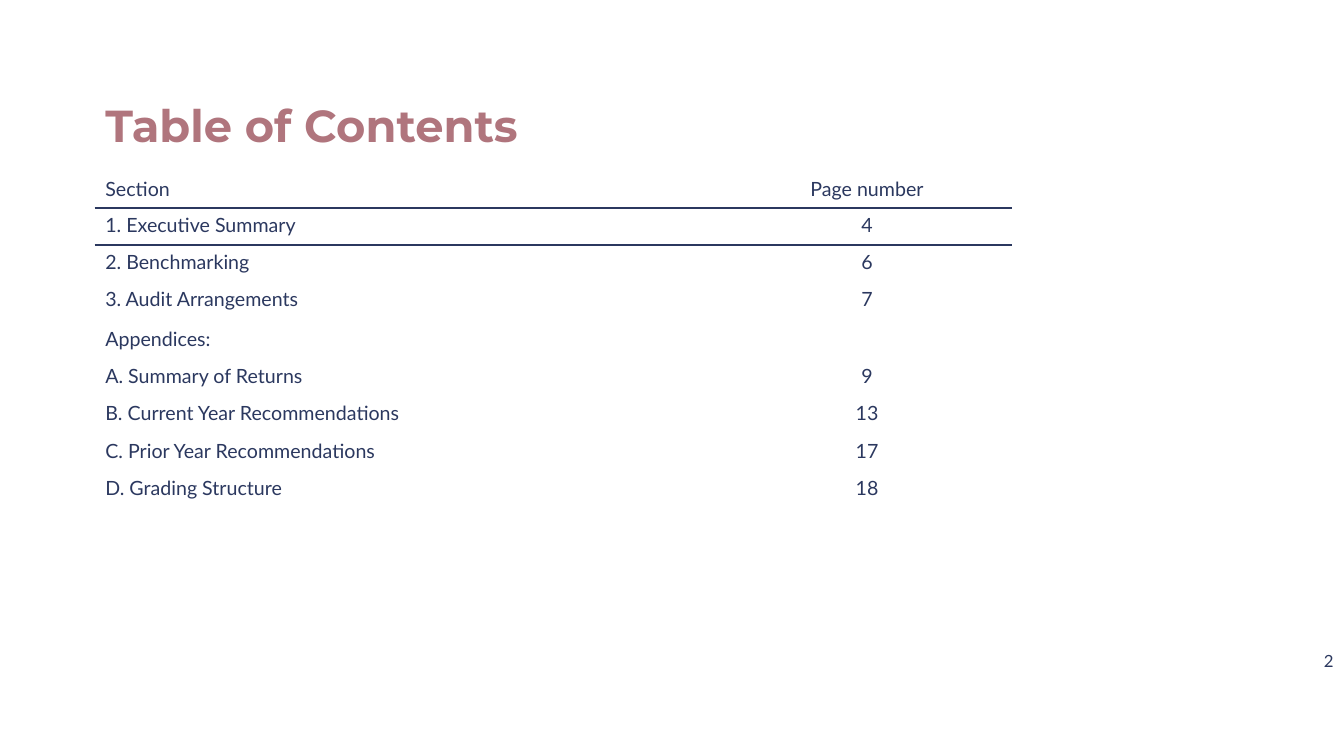
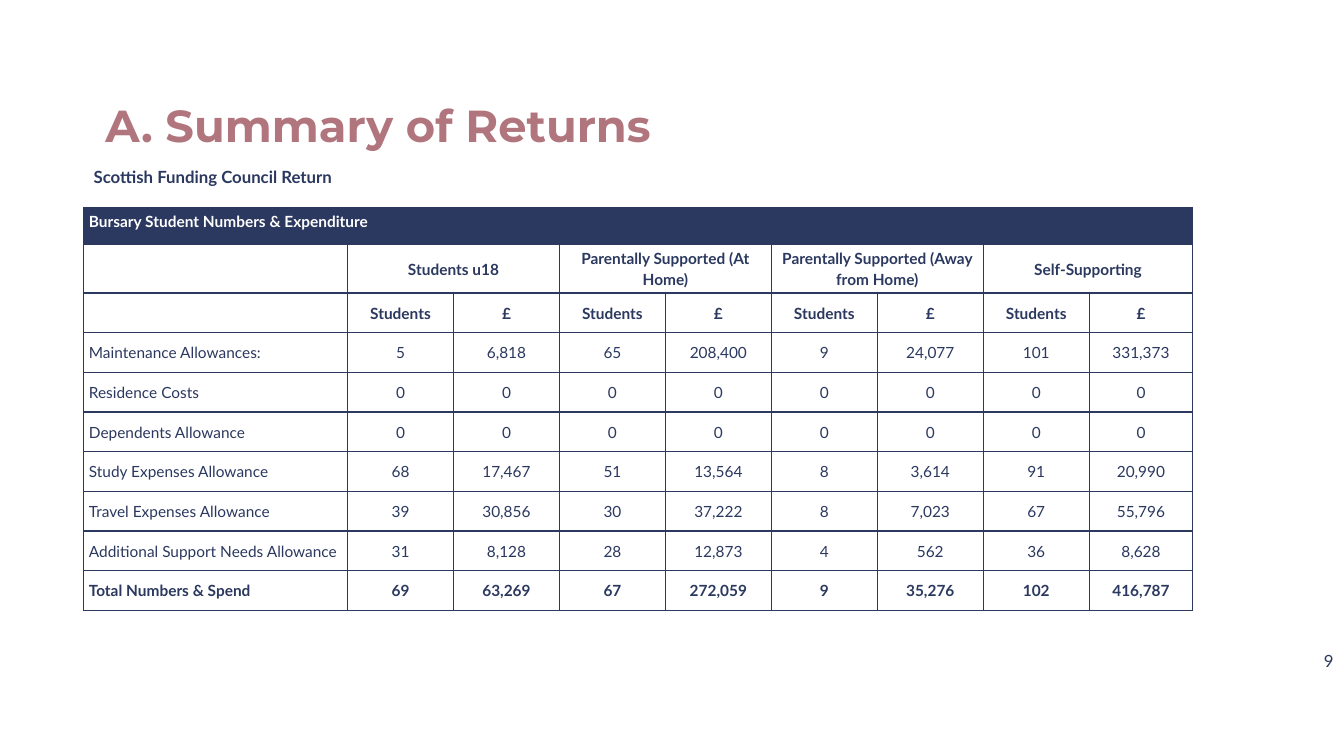
from lxml.etree import SubElement
from pptx import Presentation
from pptx.dml.color import RGBColor
from pptx.enum.text import MSO_ANCHOR, MSO_AUTO_SIZE, PP_ALIGN
from pptx.oxml.ns import qn
from pptx.util import Cm, Pt

NAVY, ROSE, WHITE = "2B385F", "B0757D", "FFFFFF"
LEFT, MID, RIGHT = PP_ALIGN.LEFT, PP_ALIGN.CENTER, PP_ALIGN.RIGHT
TOP, CENTRE = MSO_ANCHOR.TOP, MSO_ANCHOR.MIDDLE

# Shared boxes: left, top, width, height in cm
TITLE_BOX = (2.4, 1.27, 24.46, 2.69)
PAGE_BOX = (26.24, 16.15, 7.62, 1.02)

# Shared text formats
TITLE = dict(name="Montserrat", size=Pt(32), bold=True)
PAGE = dict(name="Lato", size=Pt(12), bold=False)
HEAD = dict(name="Lato", size=Pt(12), bold=True)
LIST = dict(name="Lato", size=Pt(14), bold=False)
GRID = dict(name="Lato", size=Pt(11), bold=False)
STRONG = {**GRID, "bold": True}

# Cell margins
WIDE = dict(margin_left=Cm(0.13), margin_right=Cm(0.13),
            margin_top=Cm(0.05), margin_bottom=Cm(0.1))
TIGHT = dict(margin_left=Cm(0.02), margin_right=Cm(0.02),
             margin_top=Cm(0.02), margin_bottom=Cm(0))

CONTENTS = [
    ("Section", "Page number"),
    ("1. Executive Summary", "4"),
    ("2. Benchmarking", "6"),
    ("3. Audit Arrangements", "7"),
    ("Appendices:", ""),
    ("A. Summary of Returns", "9"),
    ("B. Current Year Recommendations", "13"),
    ("C. Prior Year Recommendations", "17"),
    ("D. Grading Structure", "18"),
]

BANNER = "Bursary Student Numbers & Expenditure"
GROUPS = ["Students u18", "Parentally Supported (At Home)",
          "Parentally Supported (Away from Home)", "Self-Supporting"]
RETURNS = [
    ("Maintenance Allowances:", "5", "6,818", "65", "208,400", "9", "24,077", "101", "331,373"),
    ("Residence Costs",) + ("0",) * 8,
    ("Dependents Allowance",) + ("0",) * 8,
    ("Study Expenses Allowance", "68", "17,467", "51", "13,564", "8", "3,614", "91", "20,990"),
    ("Travel Expenses Allowance", "39", "30,856", "30", "37,222", "8", "7,023", "67", "55,796"),
    ("Additional Support Needs Allowance", "31", "8,128", "28", "12,873", "4", "562", "36", "8,628"),
    ("Total Numbers & Spend", "69", "63,269", "67", "272,059", "9", "35,276", "102", "416,787"),
]


def paint(target, code):
    """Give a font, fill or line format a colour."""
    target.rgb = RGBColor.from_string(code)


def apply(item, form):
    for key, value in form.items():
        setattr(item, key, value)


def place(shape, box):
    apply(shape, dict(zip(("left", "top", "width", "height"), map(Cm, box))))


def write(frame, text, form, code=NAVY, align=LEFT, space=None):
    para = frame.paragraphs[0]
    apply(para, dict(alignment=align, line_spacing=space))
    run = para.add_run()
    run.text = text
    apply(run.font, form)
    paint(run.font.color, code)


def add_text(slide, box, text, form, anchor=TOP, **style):
    shape = slide.shapes.add_textbox(*map(Cm, box))
    apply(shape.text_frame, dict(word_wrap=True, vertical_anchor=anchor))
    write(shape.text_frame, text, form, **style)


def add_page(deck, title, number):
    """Add a slide with the common title and page number."""
    slide = deck.slides.add_slide(deck.slide_layouts[5])
    place(slide.shapes.title, TITLE_BOX)
    frame = slide.shapes.title.text_frame
    apply(frame, dict(vertical_anchor=MSO_ANCHOR.BOTTOM, word_wrap=True,
                      auto_size=MSO_AUTO_SIZE.NONE))
    write(frame, title, TITLE, ROSE, space=0.9)
    add_text(slide, PAGE_BOX, number, PAGE, CENTRE, align=RIGHT)
    return slide


def add_grid(slide, left, top, widths, heights):
    """Add a plain table sized from its column and row lists."""
    box = (left, top, sum(widths), sum(heights))
    table = slide.shapes.add_table(len(heights), len(widths), *map(Cm, box)).table
    apply(table, dict(first_row=False, horz_banding=False))
    for col, width in zip(table.columns, widths):
        col.width = Cm(width)
    for row, height in zip(table.rows, heights):
        row.height = Cm(height)
    return table


def fill_cell(cell, code=WHITE):
    cell.fill.solid()
    paint(cell.fill.fore_color, code)


def edge(cell, sides, points):
    """Draw the named sides of a cell: L, R, T or B, in that order."""
    props = cell._tc.get_or_add_tcPr()
    for place_no, side in enumerate(sides):
        line = SubElement(props, qn("a:ln" + side), w=str(Pt(points)))
        props.insert(place_no, line)
        fill = SubElement(line, qn("a:solidFill"))
        SubElement(fill, qn("a:srgbClr"), val=NAVY)


def list_table(slide, left, top):
    """Sections and their page numbers, under a ruled heading."""
    table = add_grid(slide, left, top, [15.82, 7.26], [0.94] * len(CONTENTS))
    for r, row in enumerate(CONTENTS):
        for c, text in enumerate(row):
            cell = table.cell(r, c)
            fill_cell(cell)
            if r < 2:
                edge(cell, "T" if r else "B", 2)
            if text:
                cell.vertical_anchor = TOP if 0 < r < 4 else CENTRE
                write(cell.text_frame, text, LIST, align=MID if c else LEFT)
            else:
                apply(cell, TIGHT)


def money_table(slide, left, top):
    """Student numbers and spend for each support group."""
    heads = [[BANNER] + [""] * 8,
             [""] + [text for name in GROUPS for text in (name, "")],
             [""] + ["Students", "£"] * len(GROUPS)]
    rows = heads + RETURNS
    table = add_grid(slide, left, top, [6.65] + [2.67] * 7 + [2.61],
                     [0.94, 1.22] + [1] * (len(rows) - 2))
    # Joined heading cells
    table.cell(0, 0).merge(table.cell(0, 8))
    for c in range(1, 9, 2):
        table.cell(1, c).merge(table.cell(1, c + 1))
    # Text, fill and rules
    for r, row in enumerate(rows):
        head = r < len(heads)
        form = STRONG if head or r == len(rows) - 1 else GRID
        for c, text in enumerate(row):
            cell = table.cell(r, c)
            wide = head or c == 0
            apply(cell, WIDE if wide else TIGHT)
            cell.vertical_anchor = CENTRE if r else TOP
            fill_cell(cell, WHITE if r else NAVY)
            edge(cell, "LRTB", 1)
            if text:
                write(cell.text_frame, text, form, NAVY if r else WHITE,
                      MID if c else LEFT, 1.15 if wide else None)


def main():
    deck = Presentation()
    apply(deck, dict(slide_width=Cm(33.87), slide_height=Cm(19.05)))

    # Contents
    slide = add_page(deck, "Table of Contents", "2")
    list_table(slide, 2.4, 4.3)

    # Returns
    slide = add_page(deck, "A. Summary of Returns", "9")
    add_text(slide, (2.11, 3.89, 29.64, 0.89), "Scottish Funding Council Return",
             HEAD, space=Pt(20))
    money_table(slide, 2.11, 5.22)

    deck.save("out.pptx")


if __name__ == "__main__":
    main()
